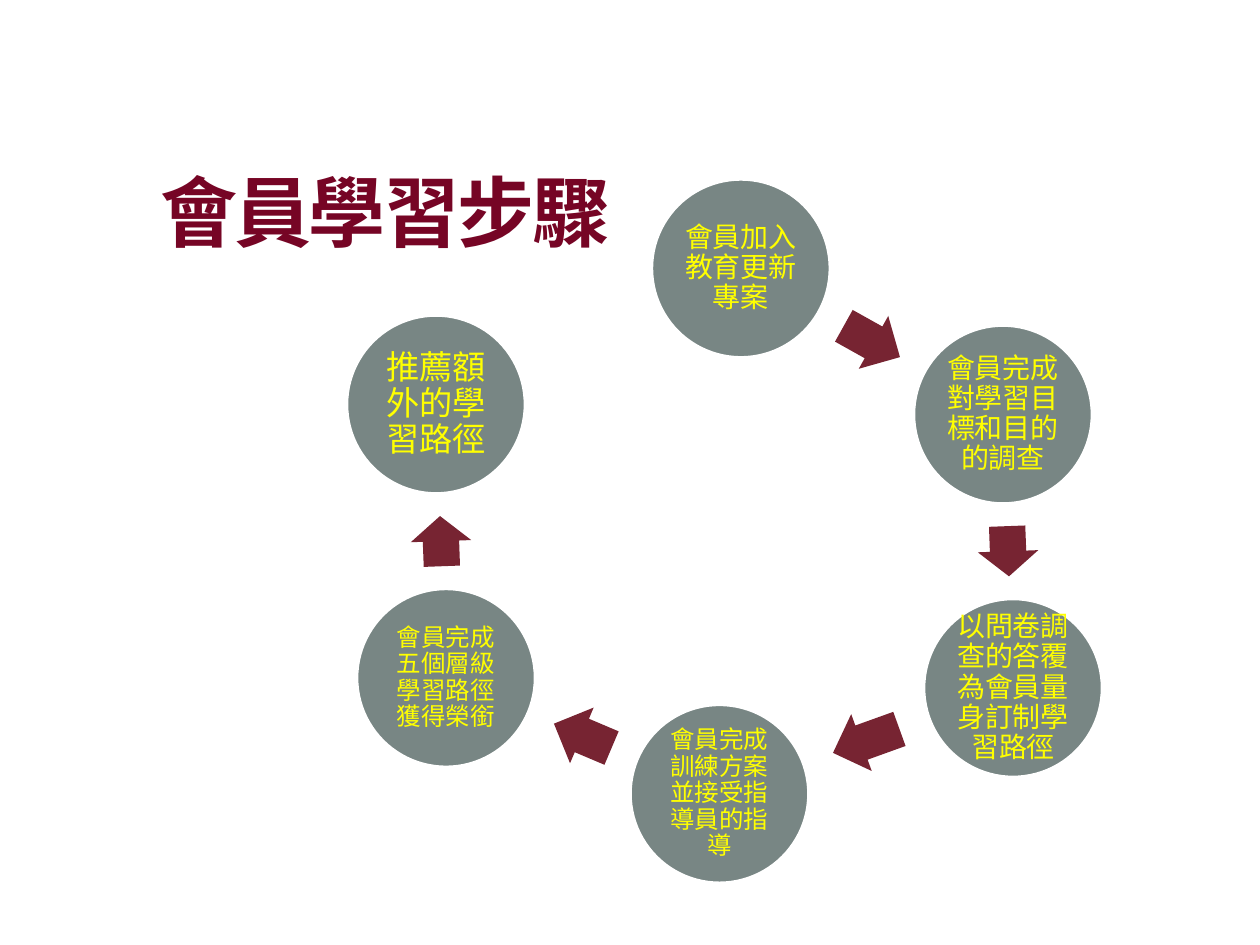
from itertools import pairwise
from math import atan2, degrees, hypot

from lxml.etree import SubElement
from pptx import Presentation
from pptx.dml.color import RGBColor
from pptx.enum.shapes import MSO_SHAPE
from pptx.enum.text import MSO_ANCHOR, MSO_AUTO_SIZE, PP_ALIGN
from pptx.oxml import parse_xml
from pptx.oxml.ns import nsdecls, qn
from pptx.util import Inches, Pt

MAROON = RGBColor(0x76, 0x05, 0x25)
ARROW_RED = RGBColor(0x77, 0x24, 0x32)
SAGE = RGBColor(0x78, 0x86, 0x84)
YELLOW = RGBColor(0xFF, 0xFF, 0x00)
WHITE = RGBColor(0xFF, 0xFF, 0xFF)
FONT = "Noto Sans CJK SC"
DIAMETER = 1.42
ARROW_HEIGHT = 0.48
ARROW_SHARE = 0.53

TITLE_SHADOW = (
    f'<a:effectLst {nsdecls("a")}><a:outerShdw blurRad="38100" dist="38100" dir="2700000" algn="tl">'
    '<a:srgbClr val="000000"><a:alpha val="43000"/></a:srgbClr></a:outerShdw></a:effectLst>'
)

STEPS = [
    (5.88, 2.13, 16, "會員加入教育更新專案"),
    (7.96, 3.29, 16, "會員完成對學習目標和目的的調查"),
    (8.04, 5.46, 16, "以問卷調查的答覆為會員量身訂制學習路徑"),
    (5.71, 6.3, 14, "會員完成訓練方案並接受指導員的指導"),
    (3.54, 5.38, 14, "會員完成五個層級學習路徑獲得榮銜"),
    (3.46, 3.21, 19, "推薦額外的學習路徑"),
]


class StepCycle:
    """Draws the title, step circles and arrows on one slide in a shared style."""

    def __init__(self, slide):
        self.slide = slide

    def label(self, shape, text, size, color, spacing, margins, bold=False):
        frame = shape.text_frame
        frame.text = text
        frame.word_wrap = True
        frame.auto_size = MSO_AUTO_SIZE.NONE
        frame.margin_left, frame.margin_top, frame.margin_right, frame.margin_bottom = map(Inches, margins)
        frame.paragraphs[0].line_spacing = spacing
        run = frame.paragraphs[0].runs[0]
        run.font.size = Pt(size)
        run.font.bold = bold
        run.font.color.rgb = color
        run.font.name = FONT
        SubElement(run.font._element, qn("a:ea"), typeface=FONT)
        return run

    def title(self, text):
        shape = self.slide.shapes.title
        shape.left, shape.top, shape.width, shape.height = map(Inches, (1.17, 1.42, 8.5, 1.17))
        run = self.label(shape, text, 44, MAROON, 0.85, (0.1, 0, 0.1, 0), bold=True)
        shape.text_frame.vertical_anchor = MSO_ANCHOR.TOP
        shape.text_frame.paragraphs[0].alignment = PP_ALIGN.LEFT
        properties = run.font._element
        properties.set("spc", "-150")
        properties.find(qn("a:latin")).addprevious(parse_xml(TITLE_SHADOW))

    def shape(self, kind, center_x, center_y, width, height, color):
        shape = self.slide.shapes.add_shape(
            kind,
            Inches(center_x - width / 2),
            Inches(center_y - height / 2),
            Inches(width),
            Inches(height),
        )
        shape.shadow.inherit = False
        shape.fill.solid()
        shape.fill.fore_color.rgb = color
        return shape

    def circle(self, center_x, center_y, size, text):
        shape = self.shape(MSO_SHAPE.OVAL, center_x, center_y, DIAMETER, DIAMETER, SAGE)
        shape.line.color.rgb = WHITE
        shape.line.width = Pt(2)
        self.label(shape, text, size, YELLOW, 0.9, (0.02,) * 4)
        shape.text_frame.vertical_anchor = MSO_ANCHOR.MIDDLE
        shape.text_frame.paragraphs[0].alignment = PP_ALIGN.CENTER

    def arrow(self, start, end):
        across, down = end[0] - start[0], end[1] - start[1]
        length = (hypot(across, down) - DIAMETER) * ARROW_SHARE
        shape = self.shape(
            MSO_SHAPE.RIGHT_ARROW,
            start[0] + across / 2,
            start[1] + down / 2,
            length,
            ARROW_HEIGHT,
            ARROW_RED,
        )
        shape.line.fill.background()
        shape.adjustments[0] = 0.6
        shape.adjustments[1] = 0.5
        shape.rotation = degrees(atan2(down, across)) % 360


def main():
    presentation = Presentation()
    presentation.slide_width = Inches(10)
    presentation.slide_height = Inches(7.5)
    cycle = StepCycle(presentation.slides.add_slide(presentation.slide_layouts[5]))
    cycle.title("會員學習步驟")
    for step in STEPS:
        cycle.circle(*step)
    for start, end in pairwise(STEPS):
        cycle.arrow(start, end)
    presentation.save("out.pptx")


if __name__ == "__main__":
    main()
